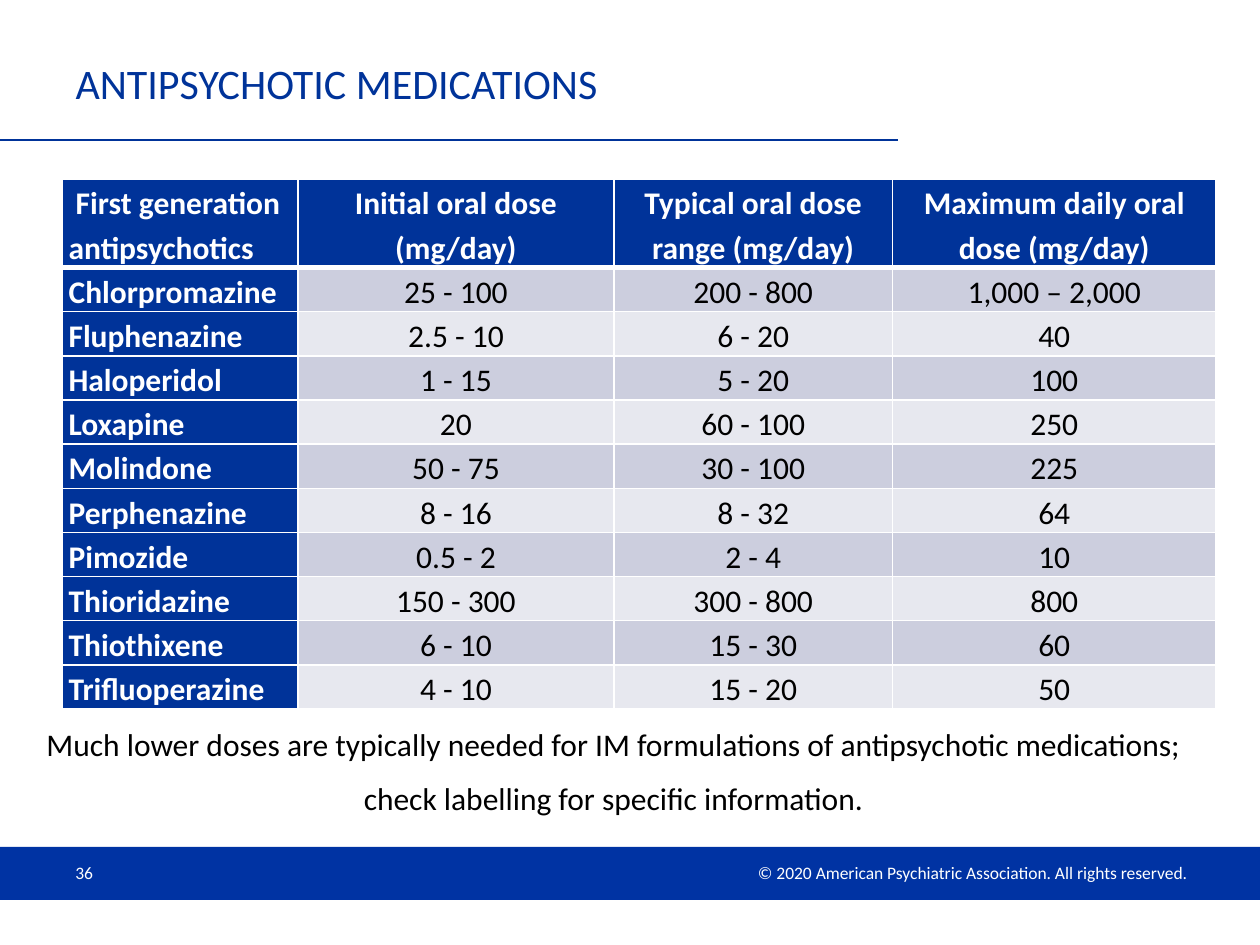
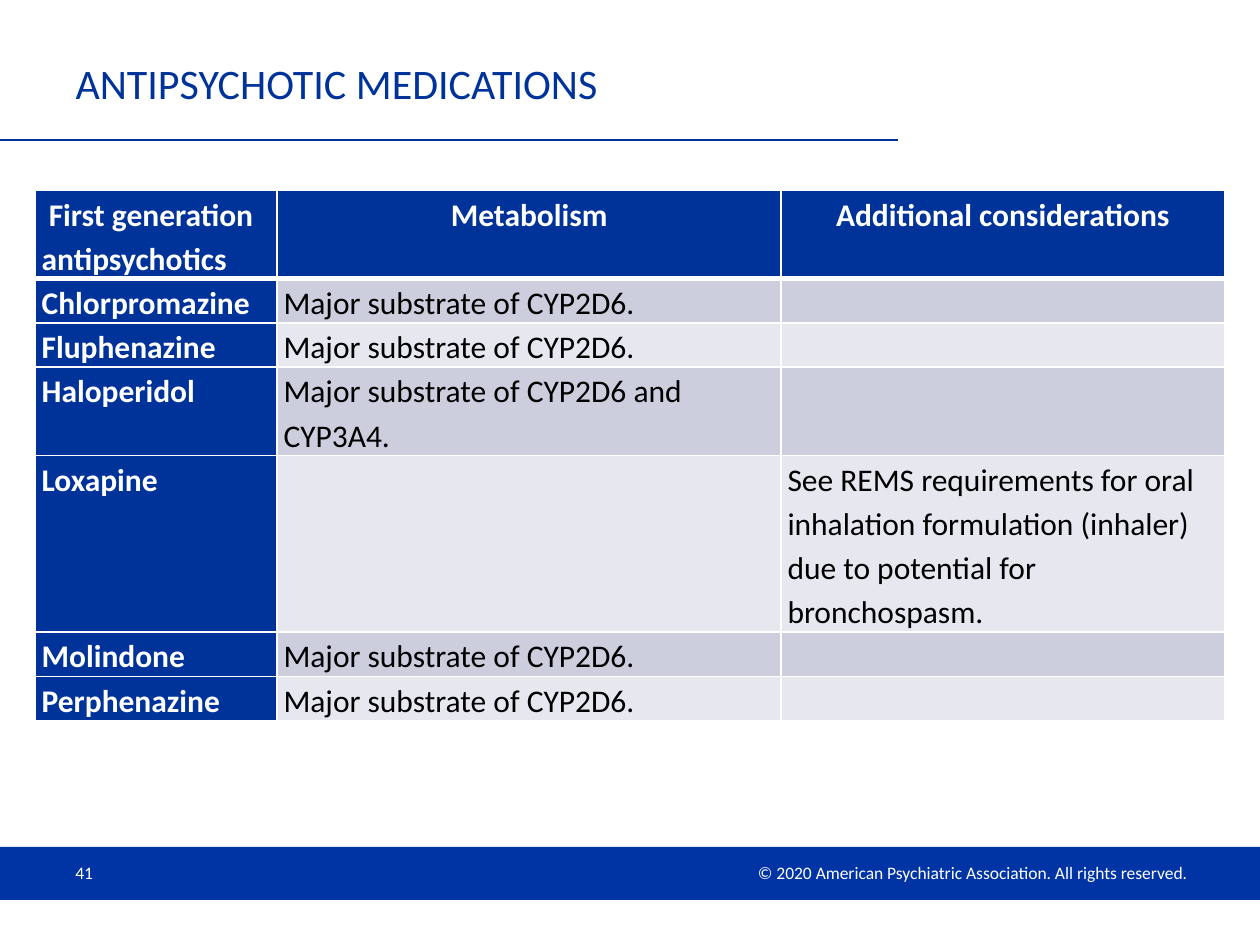
from dataclasses import dataclass

from lxml import etree
from pptx import Presentation
from pptx.dml.color import RGBColor
from pptx.enum.shapes import MSO_CONNECTOR, MSO_SHAPE
from pptx.enum.text import MSO_ANCHOR, MSO_AUTO_SIZE, PP_ALIGN
from pptx.oxml.ns import qn
from pptx.util import Pt

LEFT, CENTER, RIGHT = PP_ALIGN.LEFT, PP_ALIGN.CENTER, PP_ALIGN.RIGHT
MIDDLE, TOP = MSO_ANCHOR.MIDDLE, MSO_ANCHOR.TOP
TITLE_ONLY = 5


@dataclass(frozen=True)
class Theme:
    font: str = "Calibri"
    blue: str = "003399"
    footer_blue: str = "0033A3"
    white: str = "FFFFFF"
    black: str = "000000"
    bands: tuple = ("CCCEDE", "E7E8EF")
    title_size: float = 24
    body_size: float = 18
    footer_size: float = 10
    line_spacing: float = 1.15
    row_line: float = 25.25  # height of one line of table text


THEME = Theme()
TITLE = "ANTIPSYCHOTIC MEDICATIONS"
COPYRIGHT = "© 2020 American Psychiatric Association. All rights reserved. "
DRUG_HEADING = " First generation antipsychotics"
CYP2D6 = "Major substrate of CYP2D6."

DOSES = [
    (DRUG_HEADING, "Initial oral dose (mg/day)", "Typical oral dose range (mg/day)",
     "Maximum daily oral dose (mg/day)"),
    ("Chlorpromazine", "25 - 100", "200 - 800", "1,000 – 2,000"),
    ("Fluphenazine", "2.5 - 10", "6 - 20", "40"),
    ("Haloperidol", "1 - 15", "5 - 20", "100"),
    ("Loxapine", "20", "60 - 100", "250"),
    ("Molindone", "50 - 75", "30 - 100", "225"),
    ("Perphenazine", "8 - 16", "8 - 32", "64"),
    ("Pimozide", "0.5 - 2", "2 - 4", "10"),
    ("Thioridazine", "150 - 300", "300 - 800", "800"),
    ("Thiothixene", "6 - 10", "15 - 30", "60"),
    ("Trifluoperazine", "4 - 10", "15 - 20", "50"),
]
DOSE_NOTE = [
    "Much lower doses are typically needed for IM formulations of antipsychotic medications;",
    "check labelling for specific information.",
]
METABOLISM = [
    (DRUG_HEADING, "Metabolism", "Additional considerations"),
    ("Chlorpromazine", CYP2D6, ""),
    ("Fluphenazine", CYP2D6, ""),
    ("Haloperidol", "Major substrate of CYP2D6 and CYP3A4.", ""),
    ("Loxapine", "", "See REMS requirements for oral inhalation formulation (inhaler) "
     "due to potential for bronchospasm."),
    ("Molindone", CYP2D6, ""),
    ("Perphenazine", CYP2D6, ""),
]


def rgb(color):
    return RGBColor.from_string(color)


def format_para(para, text, size=THEME.body_size, color=THEME.black, bold=False,
                align=LEFT, line_spacing=None, space_after=0):
    para.text = text
    para.alignment = align
    para.line_spacing = line_spacing
    para.space_after = Pt(space_after)
    para.font.name = THEME.font
    para.font.size = Pt(size)
    para.font.bold = bold
    para.font.color.rgb = rgb(color)


def add_text(page, lines, left, top, width, height, anchor=TOP, **text_format):
    box = page.shapes.add_textbox(Pt(left), Pt(top), Pt(width), Pt(height))
    frame = box.text_frame
    frame.word_wrap = True
    frame.vertical_anchor = anchor
    for index, line in enumerate(lines):
        para = frame.add_paragraph() if index else frame.paragraphs[0]
        format_para(para, line, **text_format)


def add_title(page, text):
    title = page.shapes.title
    title.left, title.top, title.width, title.height = Pt(36), Pt(24.5), Pt(477.4), Pt(46)
    title.text_frame.auto_size = MSO_AUTO_SIZE.NONE
    title.text_frame.vertical_anchor = MIDDLE
    format_para(title.text_frame.paragraphs[0], text,
                size=THEME.title_size, color=THEME.blue)


def add_title_rule(page):
    rule = page.shapes.add_connector(MSO_CONNECTOR.STRAIGHT, 0, Pt(80), Pt(513.4), Pt(80))
    rule.line.color.rgb = rgb(THEME.blue)
    rule.line.width = Pt(0.75)
    etree.SubElement(rule._element.spPr, qn("a:effectLst"))


def add_footer(page, number):
    band = page.shapes.add_shape(MSO_SHAPE.RECTANGLE, 0, Pt(484), Pt(720), Pt(30.2))
    band.shadow.inherit = False
    band.fill.solid()
    band.fill.fore_color.rgb = rgb(THEME.footer_blue)
    band.line.fill.background()
    style = dict(anchor=MIDDLE, size=THEME.footer_size, color=THEME.white)
    add_text(page, [COPYRIGHT], 373, 489, 314.6, 19.4, align=RIGHT, **style)
    add_text(page, [str(number)], 36, 484, 167.8, 28.8, **style)


def set_borders(cell, **widths):
    """Draw the cell's edges in white; widths are keyed by L, R, T and B."""
    props = cell._tc.get_or_add_tcPr()
    for side, width in widths.items():
        line = etree.SubElement(props, qn(f"a:ln{side}"), w=str(Pt(width)))
        fill = etree.SubElement(line, qn("a:solidFill"))
        etree.SubElement(fill, qn("a:srgbClr"), val=THEME.white)


def format_cell(cell, text, row, column, body_align):
    is_heading = row == 0 or column == 0
    cell.margin_left = cell.margin_right = Pt(3.6)
    cell.margin_top = cell.margin_bottom = 0
    set_borders(cell, L=1, R=1, T=3 if row == 1 else 1, B=3 if row == 0 else 1)
    cell.fill.solid()
    cell.fill.fore_color.rgb = rgb(THEME.blue if is_heading else THEME.bands[(row - 1) % 2])
    if column == 0:
        align = LEFT
    else:
        align = CENTER if row == 0 else body_align
    format_para(cell.text_frame.paragraphs[0], text, bold=is_heading, align=align,
                color=THEME.white if is_heading else THEME.black,
                line_spacing=THEME.line_spacing, space_after=10)


def add_drug_table(page, records, left, top, widths, line_counts, body_align=LEFT):
    """Add a table whose row heights follow from the text lines in each row."""
    heights = [THEME.row_line * count for count in line_counts]
    frame = page.shapes.add_table(len(records), len(widths), Pt(left), Pt(top),
                                  Pt(sum(widths)), Pt(sum(heights)))
    table = frame.table
    table.first_col = True
    for column, width in zip(table.columns, widths):
        column.width = Pt(width)
    for row, height in zip(table.rows, heights):
        row.height = Pt(height)
    for row, record in enumerate(records):
        for column, text in enumerate(record):
            format_cell(table.cell(row, column), text, row, column, body_align)


def add_page(deck, number):
    page = deck.slides.add_slide(deck.slide_layouts[TITLE_ONLY])
    add_footer(page, number)
    add_title_rule(page)
    add_title(page, TITLE)
    return page


def main():
    deck = Presentation()
    deck.slide_width, deck.slide_height = Pt(720), Pt(540)

    page = add_page(deck, 36)
    add_drug_table(page, DOSES, 35.6, 102.4, (134.6, 180.7, 159.1, 185),
                   [2] + [1] * 10, body_align=CENTER)
    add_text(page, DOSE_NOTE, 14.4, 407.5, 672.5, 62, align=CENTER,
             line_spacing=THEME.line_spacing, space_after=6)

    page = add_page(deck, 41)
    add_drug_table(page, METABOLISM, 20.2, 108.8, (138.2, 288, 253.4),
                   [2, 1, 1, 2, 4, 1, 1])

    deck.save("out.pptx")


if __name__ == "__main__":
    main()
